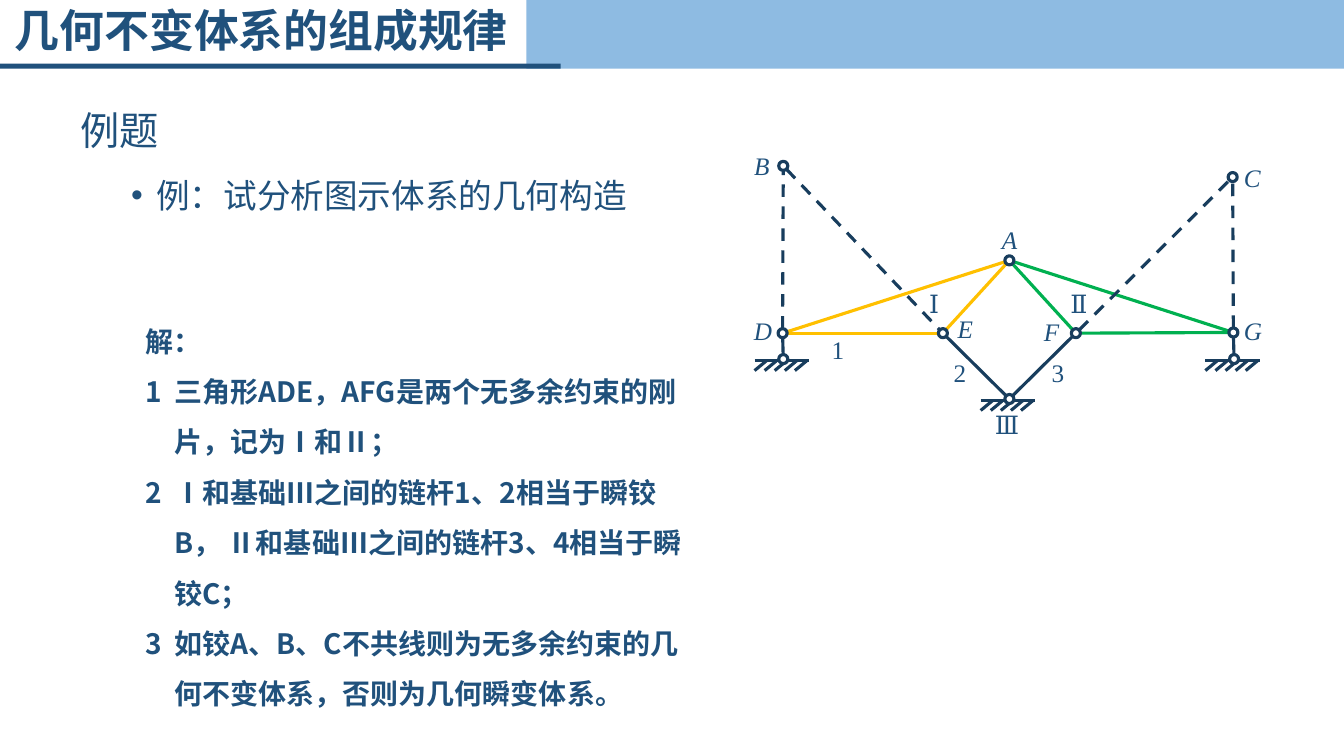
"""Build the slide on the geometric stability of a hinged frame."""
from dataclasses import dataclass
from math import hypot

from lxml import etree
from pptx import Presentation
from pptx.dml.color import RGBColor
from pptx.enum.dml import MSO_LINE
from pptx.enum.shapes import MSO_CONNECTOR, MSO_SHAPE
from pptx.enum.text import MSO_ANCHOR, MSO_AUTO_SIZE
from pptx.oxml.ns import qn
from pptx.util import Pt

STRAIGHT = MSO_CONNECTOR.STRAIGHT
RECT, OVAL = MSO_SHAPE.RECTANGLE, MSO_SHAPE.OVAL
DASH = MSO_LINE.DASH
MIDDLE, TOP = MSO_ANCHOR.MIDDLE, MSO_ANCHOR.TOP
FIXED, GROW = MSO_AUTO_SIZE.NONE, MSO_AUTO_SIZE.SHAPE_TO_FIT_TEXT


@dataclass(frozen=True)
class Theme:
    sans: str = "Noto Sans CJK SC"
    serif: str = "Times New Roman"
    band: str = "8EBBE2"
    text: str = "20517C"
    dark: str = "183D5D"
    gold: str = "FFC000"
    green: str = "00B050"
    white: str = "FFFFFF"
    title: int = 32
    head: int = 28
    body: int = 24
    proof: int = 20
    label: int = 18
    stroke: float = 2.25
    ring: float = 3.25


@dataclass
class Canvas:
    theme: Theme
    slide: object

    def shape(self, kind, left, top, width, height, fill, line=None):
        item = self.slide.shapes.add_shape(kind, Pt(left), Pt(top), Pt(width), Pt(height))
        item.shadow.inherit = False
        item.fill.solid()
        item.fill.fore_color.rgb = RGBColor.from_string(fill)
        if line:
            item.line.color.rgb = RGBColor.from_string(line)
            item.line.width = Pt(self.theme.stroke)
        else:
            item.line.fill.background()

    def line(self, start, end, color, dash=None):
        (x1, y1), (x2, y2) = start, end
        item = self.slide.shapes.add_connector(STRAIGHT, Pt(x1), Pt(y1), Pt(x2), Pt(y2))
        item.line.color.rgb = RGBColor.from_string(color)
        item.line.width = Pt(self.theme.stroke)
        if dash:
            item.line.dash_style = dash
        etree.SubElement(item._element.spPr, qn("a:effectLst"))

    def bar(self, start, end, color, dash=None):
        (x1, y1), (x2, y2) = start, end
        part = self.theme.ring / hypot(x2 - x1, y2 - y1)
        dx, dy = part * (x2 - x1), part * (y2 - y1)
        self.line((x1 + dx, y1 + dy), (x2 - dx, y2 - dy), color, dash)

    def joint(self, x, y):
        ring = self.theme.ring
        self.shape(OVAL, x - ring, y - ring, 2 * ring, 2 * ring,
                   self.theme.white, self.theme.dark)

    def ground(self, x, y):
        left, top = x - 20.5, y + 1
        self.line((left, top), (left + 39, top), self.theme.dark)
        for step in range(5):
            foot = left + 7.2 * step
            self.line((foot, top + 7.2), (foot + 8.7, top), self.theme.dark)

    def frame(self, left, top, width, height, wrap=True, anchor=TOP, size=FIXED):
        box = self.slide.shapes.add_textbox(Pt(left), Pt(top), Pt(width), Pt(height))
        frame = box.text_frame
        frame.word_wrap = wrap
        frame.vertical_anchor = anchor
        frame.auto_size = size
        return frame

    def para(self, frame, text, size, space=1.0, font=None, bold=False,
             slant=False, level=0, margin=0, indent=0, mark=None, tab=None):
        para = frame.add_paragraph() if frame.text else frame.paragraphs[0]
        para.text = text
        para.level = level
        props = para._p.get_or_add_pPr()
        props.set("marL", str(Pt(margin)))
        props.set("indent", str(Pt(indent)))
        if mark == "number":
            etree.SubElement(props, qn("a:buFont"), typeface="+mj-lt")
            etree.SubElement(props, qn("a:buAutoNum"), type="arabicPlain")
        elif mark:
            etree.SubElement(props, qn("a:buFont"), typeface="Arial")
            etree.SubElement(props, qn("a:buChar"), char=mark)
        else:
            etree.SubElement(props, qn("a:buNone"))
        if tab:
            tabs = etree.SubElement(props, qn("a:tabLst"))
            etree.SubElement(tabs, qn("a:tab"), pos=str(Pt(tab)), algn="l")
        para.line_spacing = space
        for run in para.runs:
            run.font.size = Pt(size)
            run.font.bold = bold
            run.font.italic = slant
            run.font.color.rgb = RGBColor.from_string(self.theme.text)
            run.font.name = font or self.theme.sans
            etree.SubElement(run.font._element, qn("a:ea"), typeface=run.font.name)

    def label(self, text, left, top, width):
        frame = self.frame(left, top, width, 29, wrap=False, size=GROW)
        self.para(frame, text, self.theme.label, font=self.theme.serif,
                  slant=text in "ABCDEFG")


JOINTS = {
    "A": (721, 186), "B": (559.5, 118.5), "C": (880.5, 126.5),
    "D": (559, 238), "E": (673.5, 238), "F": (768.5, 238), "G": (881, 237.5),
    "left": (559.5, 256.5), "mid": (721, 285), "right": (881.5, 256.5),
}
LABELS = [
    ("A", 708.5, 157, 26), ("B", 531.5, 103.5, 26), ("C", 881.5, 112.5, 26.5),
    ("D", 531.5, 222, 27.5), ("E", 677, 220.5, 26), ("F", 738.5, 222.5, 26),
    ("G", 881.5, 222, 27.5), ("1", 587, 235.5, 23.5), ("2", 674, 251.5, 23.5),
    ("3", 744, 251.5, 23.5), ("Ⅰ", 656.5, 202.5, 21), ("Ⅱ", 757.5, 202.5, 26),
    ("Ⅲ", 703.5, 288.5, 31.5),
]
STEPS = [
    "三角形ADE，AFG是两个无多余约束的刚片，记为Ⅰ和Ⅱ；",
    "Ⅰ和基础Ⅲ之间的链杆1、2相当于瞬铰B， Ⅱ和基础Ⅲ之间的链杆3、4相当于瞬铰C；",
    "如铰A、B、C不共线则为无多余约束的几何不变体系，否则为几何瞬变体系。",
]


def main():
    theme = Theme()
    deck = Presentation()
    deck.slide_width, deck.slide_height = Pt(960), Pt(540)
    canvas = Canvas(theme, deck.slides.add_slide(deck.slide_layouts[6]))

    canvas.shape(RECT, 376, 0, 584, 49, theme.band)
    canvas.shape(RECT, 0, 45.5, 400.5, 3.5, theme.text)
    title = canvas.frame(3.5, 0.5, 485, 45.5, anchor=MIDDLE)
    canvas.para(title, "几何不变体系的组成规律", theme.title, 0.9, bold=True)

    task = canvas.frame(50.5, 76.5, 643.5, 92)
    canvas.para(task, "例题", theme.head, 0.9)
    canvas.para(task, "例：试分析图示体系的几何构造", theme.body, 1.5,
                level=1, margin=54, indent=-18, mark="•")

    proof = canvas.frame(60.5, 216, 442, 262, size=GROW)
    canvas.para(proof, "解：", theme.proof, 1.5, bold=True, level=1, margin=36)
    for step in STEPS:
        canvas.para(proof, step, theme.proof, 1.5, bold=True, level=1,
                    margin=57, indent=-21, mark="number", tab=49.5)

    for base in ("left", "mid", "right"):
        canvas.ground(*JOINTS[base])
    bars = [
        (theme.gold, None, ["DE", "EA", "DA"]),
        (theme.green, None, ["FG", "FA", "AG"]),
        (theme.dark, None, [("D", "left"), ("E", "mid"), ("F", "mid"), ("G", "right")]),
        (theme.dark, DASH, ["DB", "BE", "FC", "GC"]),
    ]
    for color, dash, pairs in bars:
        for start, end in pairs:
            canvas.bar(JOINTS[start], JOINTS[end], color, dash)
    for spot in JOINTS.values():
        canvas.joint(*spot)
    for label in LABELS:
        canvas.label(*label)

    deck.save("out.pptx")


if __name__ == "__main__":
    main()
